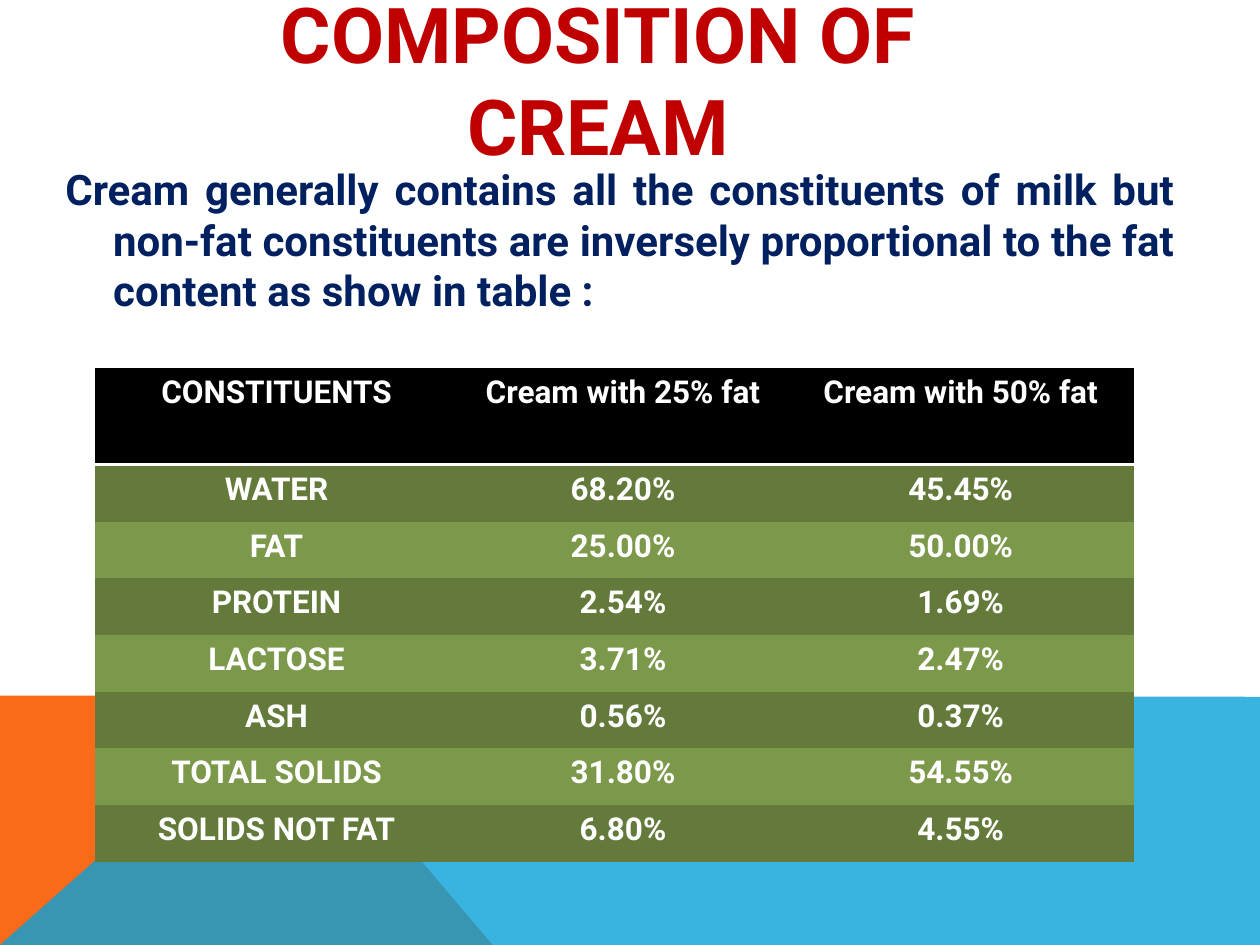
from lxml import etree
from pptx import Presentation
from pptx.dml.color import RGBColor
from pptx.enum.text import MSO_ANCHOR, PP_ALIGN
from pptx.oxml.ns import qn
from pptx.util import Inches, Pt

CENTER, JUSTIFY = PP_ALIGN.CENTER, PP_ALIGN.JUSTIFY
TOP, MIDDLE = MSO_ANCHOR.TOP, MSO_ANCHOR.MIDDLE
NO_STYLE = "{2D5ABB26-0587-4C30-8999-92F81FD0307C}"

COLORS = {
    "orange": "F96A1B", "blue": "08A1D9", "red": "C00000", "navy": "002060",
    "white": "FFFFFF", "black": "000000", "dark_green": "637A3B", "green": "7C984A",
}

ROWS = [
    ("CONSTITUENTS", "Cream with 25% fat", "Cream with 50% fat"),
    ("WATER", "68.20%", "45.45%"),
    ("FAT", "25.00%", "50.00%"),
    ("PROTEIN", "2.54%", "1.69%"),
    ("LACTOSE", "3.71%", "2.47%"),
    ("ASH", "0.56%", "0.37%"),
    ("TOTAL SOLIDS", "31.80%", "54.55%"),
    ("SOLIDS NOT FAT", "6.80%", "4.55%"),
]


def rgb(name):
    return RGBColor.from_string(COLORS[name])


class SlideBuilder:
    """Holds the font and the slide being drawn on."""

    def __init__(self, slide, font="Roboto"):
        self.s = slide
        self.font = font

    def fill_text(self, tf, text, size, color, align):
        p = tf.paragraphs[0]
        p.alignment = align
        r = p.add_run()
        r.text = text
        style = {"name": self.font, "size": Pt(size), "bold": True}
        for key, value in style.items():
            setattr(r.font, key, value)
        r.font.color.rgb = rgb(color)
        return p

    def polygon(self, points, color, opacity=100):
        pts = [(Inches(x), Inches(y)) for x, y in points]
        builder = self.s.shapes.build_freeform(*pts[0])
        builder.add_line_segments(pts[1:], close=True)
        sp = builder.convert_to_shape()
        sp.shadow.inherit = False
        sp.fill.solid()
        sp.fill.fore_color.rgb = rgb(color)
        sp.line.fill.background()
        if opacity < 100:
            clr = sp._element.spPr.find(".//" + qn("a:srgbClr"))
            etree.SubElement(clr, qn("a:alpha"), val=str(opacity * 1000))

    def text(self, box, text, size, color, align, anchor=TOP, hanging=0):
        sp = self.s.shapes.add_textbox(*map(Inches, box))
        tf = sp.text_frame
        tf.word_wrap = True
        tf.vertical_anchor = anchor
        p = self.fill_text(tf, text, size, color, align)
        if hanging:
            pPr = p._p.get_or_add_pPr()
            pPr.set("marL", str(Inches(hanging)))
            pPr.set("indent", str(-Inches(hanging)))

    def bottom_border(self, cell, color, width):
        ln = etree.Element(qn("a:lnB"), w=str(Pt(width)))
        fill = etree.SubElement(ln, qn("a:solidFill"))
        etree.SubElement(fill, qn("a:srgbClr"), val=COLORS[color])
        cell._tc.get_or_add_tcPr().insert(0, ln)

    def table(self, left, top, widths, heights, rows):
        box = map(Inches, (left, top, sum(widths), sum(heights)))
        table = self.s.shapes.add_table(len(rows), len(widths), *box).table
        table._tbl.tblPr.find(qn("a:tableStyleId")).text = NO_STYLE
        for column, width in zip(table.columns, widths):
            column.width = Inches(width)
        for i, (row, height) in enumerate(zip(table.rows, heights)):
            row.height = Inches(height)
            fill = "black" if i == 0 else ("green", "dark_green")[i % 2]
            for cell, text in zip(row.cells, rows[i]):
                cell.fill.solid()
                cell.fill.fore_color.rgb = rgb(fill)
                self.fill_text(cell.text_frame, text, 18, "white", CENTER)
                if i == 0:
                    self.bottom_border(cell, "white", 2)


def main():
    prs = Presentation()
    prs.slide_width, prs.slide_height = Inches(10), Inches(7.5)
    b = SlideBuilder(prs.slides.add_slide(prs.slide_layouts[6]))

    b.polygon([(0, 7.5), (0, 5.52), (2.23, 5.52), (3.91, 7.5)], "orange")
    b.polygon([(0, 7.5), (2.23, 5.52), (10, 5.53), (10, 7.5)], "blue", opacity=80)

    b.text((1.25, 0.25, 7, 0.75), "COMPOSITION OF CREAM", 44, "red", CENTER, MIDDLE)
    b.text((0.42, 1.25, 9, 3.33),
           "Cream generally contains all the constituents of milk but non-fat "
           "constituents are inversely proportional to the fat content as show "
           "in table :", 24, "navy", JUSTIFY, hanging=0.38)
    b.table(0.75, 2.92, [2.89, 2.61, 2.75], [0.77] + [0.45] * 7, ROWS)

    prs.save("out.pptx")


if __name__ == "__main__":
    main()
